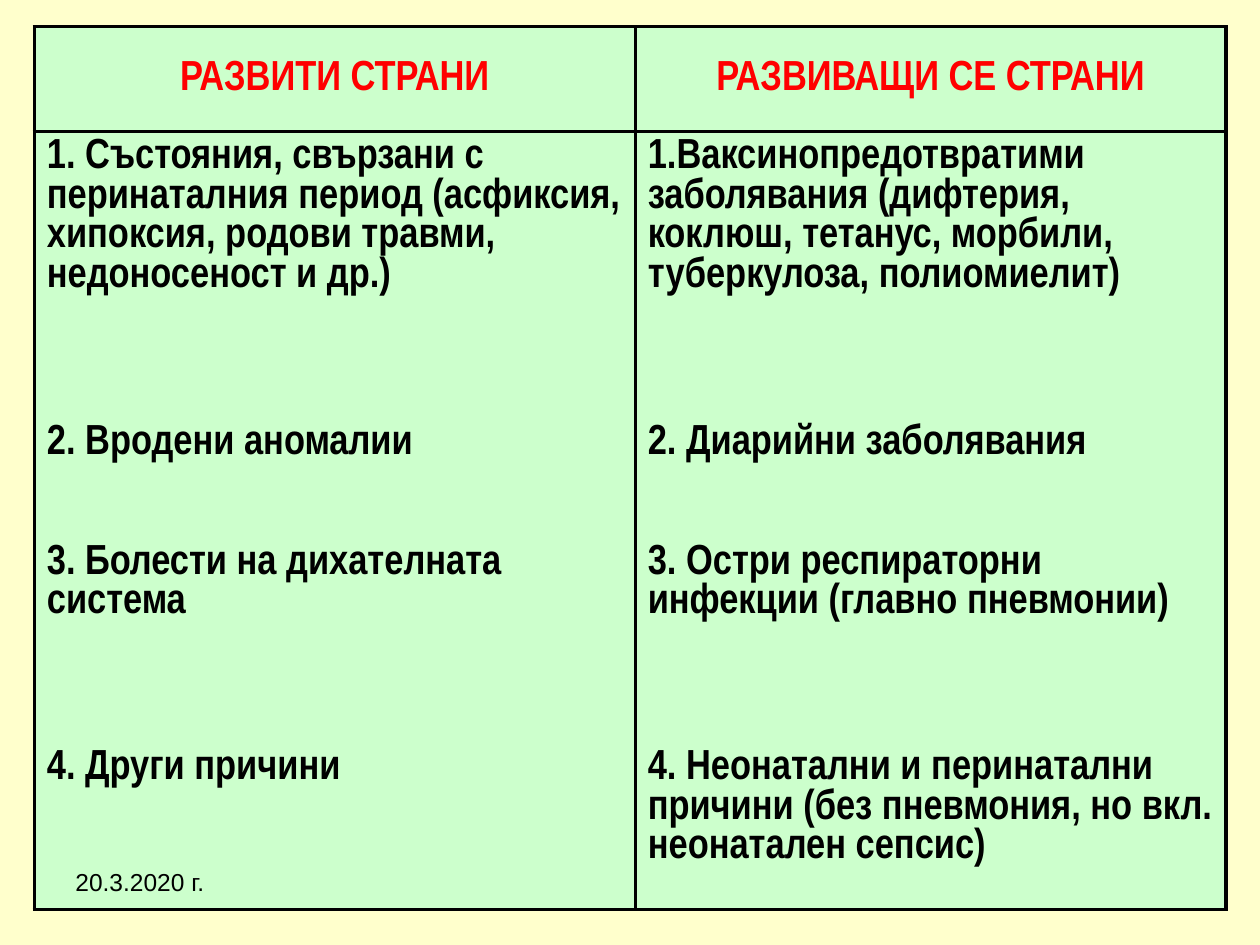
"""Build a slide comparing causes of child mortality in developed and developing countries."""
from dataclasses import dataclass

import pptx
import pptx.dml.color
import pptx.enum.text
import pptx.oxml.ns
import pptx.util
from lxml import etree

Pt = pptx.util.Pt
RGBColor = pptx.dml.color.RGBColor
Align = pptx.enum.text.PP_ALIGN
Anchor = pptx.enum.text.MSO_ANCHOR

CREAM = RGBColor(0xFF, 0xFF, 0xCC)
MINT = RGBColor(0xCC, 0xFF, 0xCC)
RED = RGBColor(0xFF, 0x00, 0x00)
BLACK = RGBColor(0x00, 0x00, 0x00)
COLUMN_WIDTHS = (343.4, 337.6)
BORDER_WIDTH = 2


@dataclass(frozen=True)
class ComparisonRow:
    height: float
    developed: str
    developing: str


ROWS = (
    ComparisonRow(60, "РАЗВИТИ СТРАНИ", "РАЗВИВАЩИ СЕ СТРАНИ"),
    ComparisonRow(
        163.4,
        "1. Състояния, свързани с перинаталния период (асфиксия, хипоксия, "
        "родови травми, недоносеност и др.)",
        "1.Ваксинопредотвратими заболявания (дифтерия, коклюш, тетанус, "
        "морбили, туберкулоза, полиомиелит)",
    ),
    ComparisonRow(68.4, "2. Вродени аномалии", "2. Диарийни заболявания"),
    ComparisonRow(
        117.4,
        "3. Болести на дихателната система",
        "3. Остри респираторни инфекции (главно пневмонии)",
    ),
    ComparisonRow(
        95.5,
        "4. Други причини",
        "4. Неонатални и перинатални причини (без пневмония, но вкл. неонатален сепсис)",
    ),
)


def add_text(para, text: str, font: str, size: float, color: RGBColor, bold: bool) -> None:
    span = para.add_run()
    span.text = text
    span.font.name = font
    span.font.size = Pt(size)
    span.font.bold = bold
    span.font.color.rgb = color


def set_borders(cell, sides: str) -> None:
    properties = cell._tc.get_or_add_tcPr()
    qn = pptx.oxml.ns.qn
    for side in "LRTB":
        line = etree.SubElement(properties, qn(f"a:ln{side}"), w=str(Pt(BORDER_WIDTH)))
        if side in sides:
            fill = etree.SubElement(line, qn("a:solidFill"))
            etree.SubElement(fill, qn("a:srgbClr"), val=str(BLACK))
        else:
            etree.SubElement(line, qn("a:noFill"))


def fill_cell(cell, text: str, is_header: bool, is_last: bool, under_header: bool) -> None:
    sides = "LR" + ("T" if is_header or under_header else "") + ("B" if is_header or is_last else "")
    set_borders(cell, sides)
    cell.fill.solid()
    cell.fill.fore_color.rgb = MINT
    cell.vertical_anchor = Anchor.MIDDLE if is_header else Anchor.TOP
    para = cell.text_frame.paragraphs[0]
    para.alignment = Align.CENTER if is_header else Align.LEFT
    para.line_spacing = 1.0
    add_text(para, text, "Arial Narrow", 24, RED if is_header else BLACK, True)


def add_comparison(page) -> None:
    height = sum(row.height for row in ROWS)
    frame = page.shapes.add_table(
        len(ROWS), len(COLUMN_WIDTHS), Pt(19.6), Pt(15.3), Pt(sum(COLUMN_WIDTHS)), Pt(height)
    )
    table = frame.table
    table.first_row = True
    table.horz_banding = False
    for column, width in zip(table.columns, COLUMN_WIDTHS):
        column.width = Pt(width)
    for index, row in enumerate(ROWS):
        table.rows[index].height = Pt(row.height)
        for column, text in enumerate((row.developed, row.developing)):
            fill_cell(table.cell(index, column), text, index == 0, index == len(ROWS) - 1, index == 1)


def add_date(page) -> None:
    box = page.shapes.add_textbox(Pt(36), Pt(491.8), Pt(168), Pt(37.4))
    box.text_frame.word_wrap = True
    add_text(box.text_frame.paragraphs[0], "20.3.2020 г.", "Arial", 14, BLACK, False)


def main() -> None:
    deck = pptx.Presentation()
    deck.slide_width, deck.slide_height = Pt(720), Pt(540)
    page = deck.slides.add_slide(deck.slide_layouts[6])
    page.background.fill.solid()
    page.background.fill.fore_color.rgb = CREAM
    add_comparison(page)
    add_date(page)
    deck.save("out.pptx")


if __name__ == "__main__":
    main()
